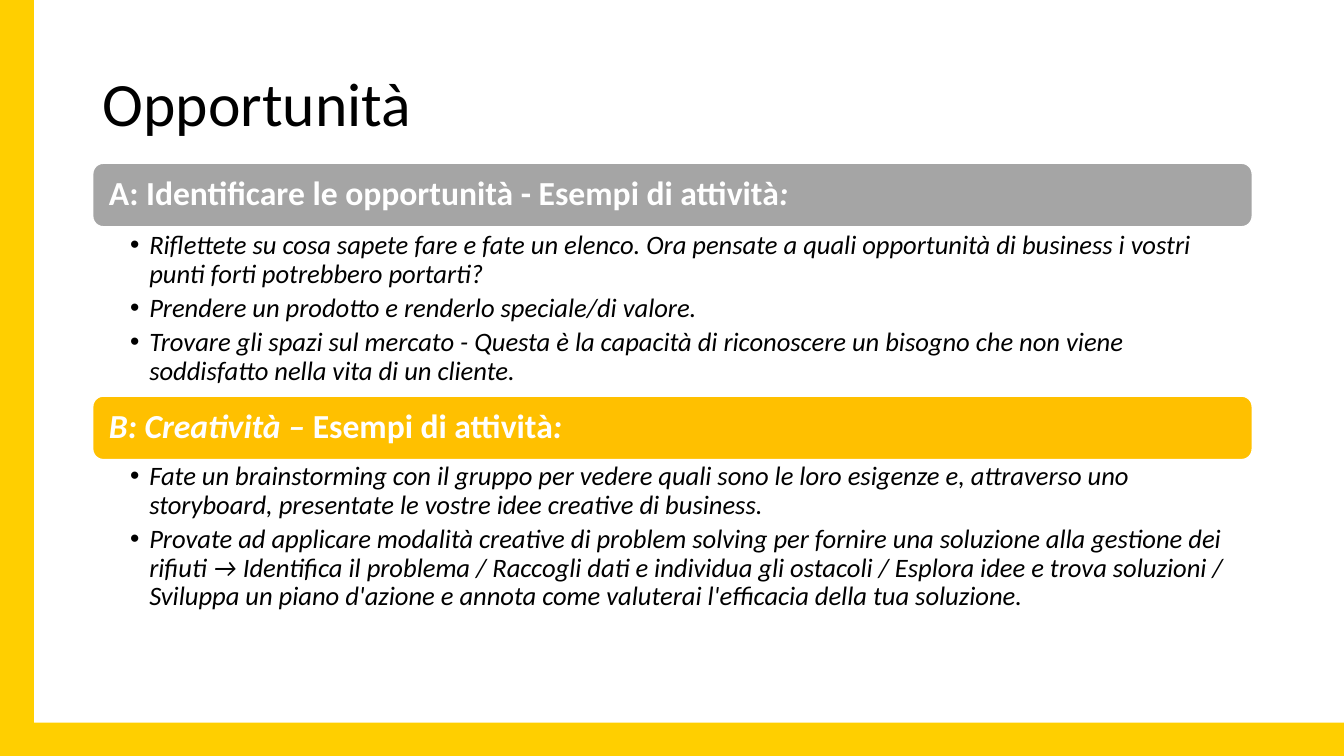
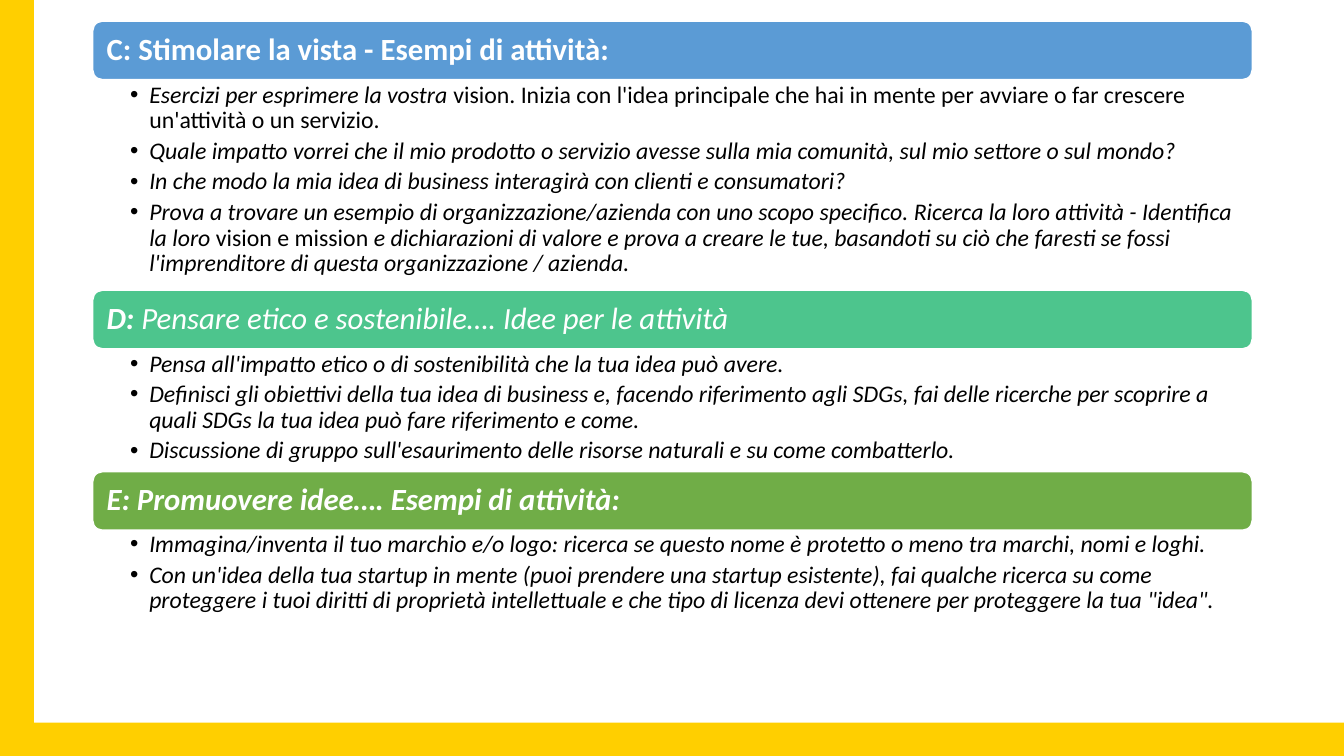
from lxml import etree
from pptx import Presentation
from pptx.dml.color import RGBColor
from pptx.enum.shapes import MSO_SHAPE
from pptx.enum.text import MSO_ANCHOR, MSO_AUTO_SIZE, PP_ALIGN
from pptx.oxml.ns import qn
from pptx.util import Inches, Pt

CORNER = MSO_SHAPE.CORNER
ROUNDED = MSO_SHAPE.ROUNDED_RECTANGLE
TOP, MIDDLE = MSO_ANCHOR.TOP, MSO_ANCHOR.MIDDLE
LEFT_ALIGN = PP_ALIGN.LEFT
NO_AUTOFIT = MSO_AUTO_SIZE.NONE

FRAME_YELLOW = RGBColor(0xFF, 0xCF, 0x00)
GRAY = RGBColor(0xA5, 0xA5, 0xA5)
GOLD = RGBColor(0xFF, 0xC0, 0x00)
BLUE = RGBColor(0x5B, 0x9B, 0xD5)
TEAL = RGBColor(0x4D, 0xC5, 0x8D)
GREEN = RGBColor(0x70, 0xAD, 0x47)
WHITE = RGBColor(0xFF, 0xFF, 0xFF)
BLACK = RGBColor(0x00, 0x00, 0x00)

FONT = "Calibri"
SLIDE_WIDTH, SLIDE_HEIGHT = Inches(13.33), Inches(7.5)
CONTENT_LEFT, CONTENT_WIDTH = Inches(0.92), Inches(11.5)
BULLET_INDENT = Inches(0.19)
TWO_CONTENT, COMPARISON = 3, 4  # layouts with two and four body placeholders

# A paragraph is a list of (text, style) runs; in a style, b is bold and i is italic.
# A section is (bar colour, bar top, list top, list height, heading, bullets).
SLIDES = [
    {
        "layout": TWO_CONTENT,
        "title": "Opportunità",
        "bar_height": 0.63,
        "heading_size": 24,
        "heading_inset": 0.13,
        "list_size": 19,
        "list_right_inset": 0.19,
        "sections": [
            (GRAY, 1.62, 2.27, 1.66,
             [("A: Identificare le opportunità - Esempi di attività", "b"), (":", "bi")],
             [
                 [("Riflettete su cosa sapete fare e fate un elenco. Ora pensate a quali "
                   "opportunità di business i vostri punti forti potrebbero portarti?", "i")],
                 [("Prendere un prodotto e renderlo speciale/di valore.", "i")],
                 [("Trovare gli spazi sul mercato - Questa è la capacità di riconoscere un "
                   "bisogno che non viene soddisfatto nella vita di un cliente.", "i")],
             ]),
            (GOLD, 3.93, 4.56, 1.6,
             [("B: Creatività – ", "bi"), ("Esempi di attività", "b"), (":", "bi")],
             [
                 [("Fate un brainstorming con il gruppo per vedere quali sono le loro esigenze "
                   "e, attraverso uno storyboard, presentate le vostre idee creative di "
                   "business.", "i")],
                 [("Provate ad applicare modalità creative di problem solving per fornire una "
                   "soluzione alla gestione dei rifiuti → Identifica il problema / Raccogli "
                   "dati e individua gli ostacoli / Esplora idee e trova soluzioni / Sviluppa "
                   "un piano d'azione e annota come valuterai l'efficacia della tua "
                   "soluzione.", "i")],
             ]),
        ],
    },
    {
        "layout": COMPARISON,
        "title": None,
        "bar_height": 0.58,
        "heading_size": 22,
        "heading_inset": 0.11,
        "list_size": 17,
        "list_right_inset": 0.17,
        "sections": [
            (BLUE, 0.21, 0.79, 2.09,
             [("C: Stimolare la vista - Esempi di attività:", "b")],
             [
                 [("Esercizi per esprimere la vostra ", "i"),
                  ("vision. Inizia con l'idea principale che hai in mente per avviare o far "
                   "crescere un'attività o un servizio.", "")],
                 [("Quale impatto vorrei che il mio prodotto o servizio avesse sulla mia "
                   "comunità, sul mio settore o sul mondo?", "i")],
                 [("In che modo la mia idea di business interagirà con clienti e "
                   "consumatori?", "i")],
                 [("Prova a trovare un esempio di organizzazione/azienda con uno scopo "
                   "specifico. Ricerca la loro attività - Identifica la loro ", "i"),
                  ("vision e mission", ""),
                  (" e dichiarazioni di valore e prova a creare le tue, basandoti su ciò che "
                   "faresti se fossi l'imprenditore di questa organizzazione / azienda.", "i")],
             ]),
            (TEAL, 2.88, 3.46, 1.22,
             [("D: ", "bi"), ("Pensare etico e sostenibile…. Idee per le attività", "i")],
             [
                 [("Pensa all'impatto etico o di sostenibilità che la tua idea può "
                   "avere.", "i")],
                 [("Definisci gli obiettivi della tua idea di business e, facendo riferimento "
                   "agli SDGs, fai delle ricerche per scoprire a quali SDGs la tua idea può "
                   "fare riferimento e come.", "i")],
                 [("Discussione di gruppo sull'esaurimento delle risorse naturali e su come "
                   "combatterlo.", "i")],
             ]),
            (GREEN, 4.68, 5.25, 0.92,
             [("E: Promuovere idee…. Esempi di attività:", "bi")],
             [
                 [("Immagina/inventa il tuo marchio e/o logo: ricerca se questo nome è protetto "
                   "o meno tra marchi, nomi e loghi.", "i")],
                 [("Con un'idea della tua startup in mente (puoi prendere una startup "
                   "esistente), fai qualche ricerca su come proteggere i tuoi diritti di "
                   "proprietà intellettuale e che tipo di licenza devi ottenere per proteggere "
                   "la tua \"idea\".", "i")],
             ]),
        ],
    },
]


def write_text(shape, paragraphs, size, color, anchor=MIDDLE, insets=(0.1, 0.05, 0.1, 0.05),
               bullets=False):
    """Fill a shape with paragraphs of styled runs; insets are left, top, right, bottom."""
    frame = shape.text_frame
    frame.word_wrap = True
    frame.auto_size = NO_AUTOFIT
    frame.vertical_anchor = anchor
    (frame.margin_left, frame.margin_top,
     frame.margin_right, frame.margin_bottom) = [Inches(inset) for inset in insets]
    for index, runs in enumerate(paragraphs):
        paragraph = frame.add_paragraph() if index else frame.paragraphs[0]
        paragraph.alignment = LEFT_ALIGN
        paragraph.line_spacing = 0.9
        paragraph.space_before = Pt(0)
        paragraph.space_after = Pt(0.2 * size if bullets else 0)
        if bullets:
            paragraph.level = 1
            properties = paragraph._p.get_or_add_pPr()
            properties.set("marL", str(BULLET_INDENT))
            properties.set("indent", str(-BULLET_INDENT))
            etree.SubElement(properties, qn("a:buFont"), typeface="Arial")
            etree.SubElement(properties, qn("a:buChar"), char="•")
        for text, style in runs:
            run = paragraph.add_run()
            run.text = text
            run.font.name = FONT
            run.font.size = Pt(size)
            run.font.bold = "b" in style
            run.font.italic = "i" in style
            run.font.color.rgb = color


def place(shape, top, height):
    """Give a placeholder the full content width."""
    shape.left, shape.top = CONTENT_LEFT, Inches(top)
    shape.width, shape.height = CONTENT_WIDTH, Inches(height)


presentation = Presentation()
presentation.slide_width = SLIDE_WIDTH
presentation.slide_height = SLIDE_HEIGHT

for content in SLIDES:
    slide = presentation.slides.add_slide(presentation.slide_layouts[content["layout"]])
    title, *bodies = slide.placeholders
    sections = content["sections"]

    frame_shape = slide.shapes.add_shape(CORNER, 0, 0, SLIDE_WIDTH, SLIDE_HEIGHT)
    frame_shape.adjustments[0] = 0.044
    frame_shape.adjustments[1] = 0.045
    frame_shape.shadow.inherit = False
    frame_shape.fill.solid()
    frame_shape.fill.fore_color.rgb = FRAME_YELLOW
    frame_shape.line.fill.background()

    unused = bodies[len(sections):]
    if content["title"]:
        place(title, 0.33, 1.45)
        write_text(title, [[(content["title"], "")]], size=44, color=BLACK)
    else:
        unused.append(title)
    for placeholder in unused:
        placeholder.element.getparent().remove(placeholder.element)

    for body, section in zip(bodies, sections):
        bar_color, bar_top, list_top, list_height, heading, bullet_items = section
        bar = slide.shapes.add_shape(ROUNDED, CONTENT_LEFT, Inches(bar_top),
                                     CONTENT_WIDTH, Inches(content["bar_height"]))
        bar.shadow.inherit = False
        bar.fill.solid()
        bar.fill.fore_color.rgb = bar_color
        bar.line.color.rgb = WHITE
        bar.line.width = Pt(1)
        inset = content["heading_inset"]
        write_text(bar, [heading], size=content["heading_size"], color=WHITE,
                   insets=(inset, inset, inset, inset))

        place(body, list_top, list_height)
        write_text(body, bullet_items, size=content["list_size"], color=BLACK, anchor=TOP,
                   insets=(0.37, 0.03, content["list_right_inset"], 0.03), bullets=True)

presentation.save("out.pptx")
